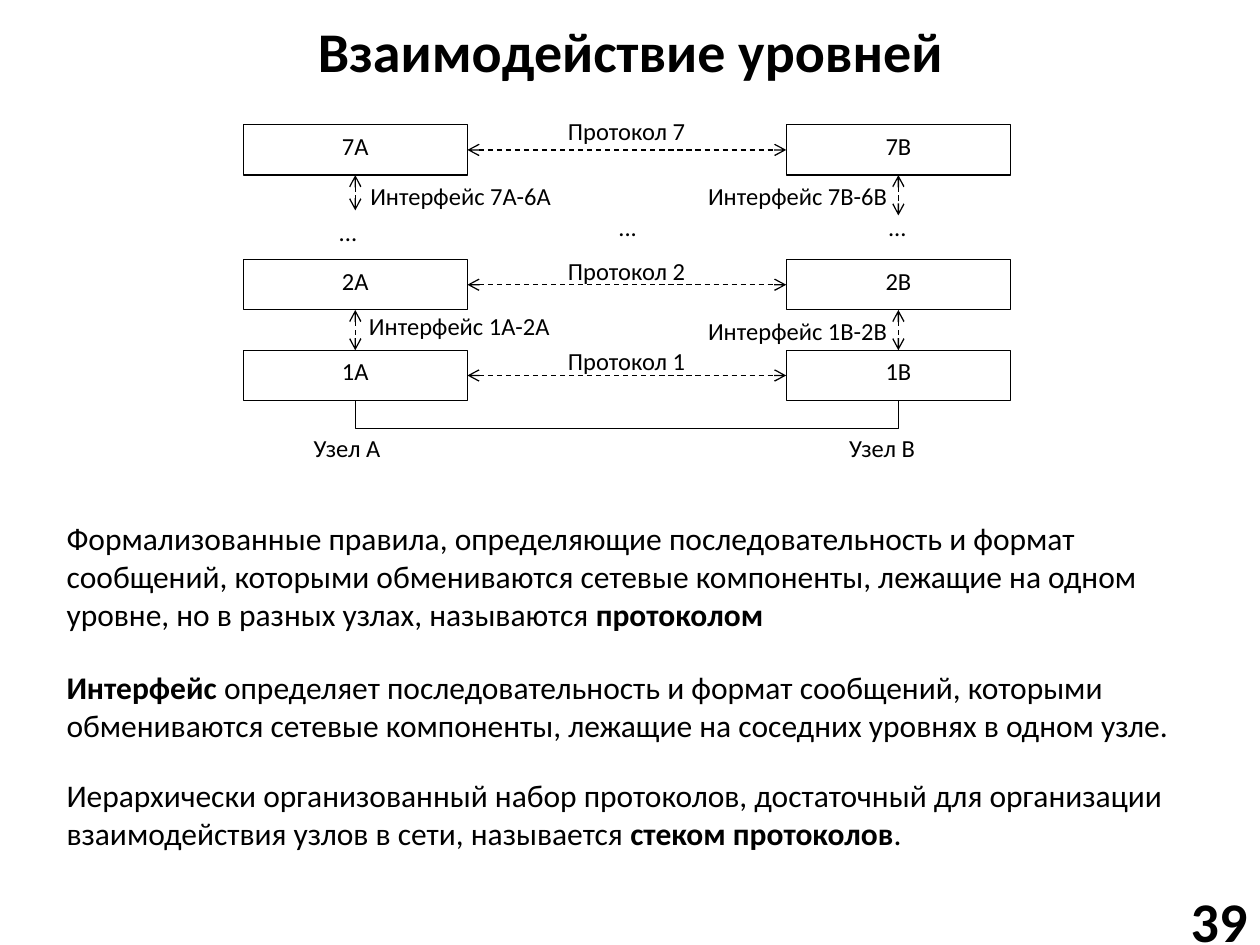
from lxml import etree
from pptx import Presentation
from pptx.dml.color import RGBColor
from pptx.enum.dml import MSO_LINE
from pptx.enum.shapes import MSO_CONNECTOR, MSO_SHAPE
from pptx.enum.text import MSO_ANCHOR, PP_ALIGN
from pptx.oxml.ns import qn
from pptx.util import Inches, Pt

LEFT, CENTER, RIGHT = PP_ALIGN.LEFT, PP_ALIGN.CENTER, PP_ALIGN.RIGHT
TOP, MIDDLE = MSO_ANCHOR.TOP, MSO_ANCHOR.MIDDLE
RECTANGLE = MSO_SHAPE.RECTANGLE
STRAIGHT = MSO_CONNECTOR.STRAIGHT
DASH = MSO_LINE.DASH

FONT = "Calibri"
BLACK, WHITE = "000000", "FFFFFF"
TITLE_ONLY = 5

BOX_WIDTH, BOX_HEIGHT = 1.78, 0.4
NODE_LEFTS = {"A": 1.93, "B": 6.24}
LEVEL_TOPS = {7: 0.99, 2: 2.06, 1: 2.78}
NODE_CENTERS = {node: left + BOX_WIDTH / 2 for node, left in NODE_LEFTS.items()}

# Text, left, top, width, alignment
LABELS = [
    ("Протокол 7", 4.41, 0.87, 1.23, LEFT),
    ("Протокол 2", 4.41, 1.98, 1.23, LEFT),
    ("Протокол 1", 4.41, 2.7, 1.23, LEFT),
    ("Интерфейс 7A-6A", 2.84, 1.39, 1.82, LEFT),
    ("Интерфейс 7B-6B", 5.32, 1.39, 1.82, RIGHT),
    ("Интерфейс 1A-2A", 2.83, 2.42, 1.82, LEFT),
    ("Интерфейс 1B-2B", 5.32, 2.46, 1.82, RIGHT),
    ("...", 2.59, 1.67, 0.4, LEFT),
    ("...", 4.81, 1.63, 0.4, LEFT),
    ("...", 6.95, 1.63, 0.4, LEFT),
    ("Узел A", 2.39, 3.39, 0.91, LEFT),
    ("Узел B", 6.64, 3.39, 0.91, LEFT),
]

# Top, height, runs as (text, bold)
DEFINITIONS = [
    (4.07, 1.01, [
        ("Формализованные правила, определяющие последовательность и формат "
         "сообщений, которыми обмениваются сетевые компоненты, лежащие на одном "
         "уровне, но в разных узлах, называются ", False),
        ("протоколом", True),
    ]),
    (5.25, 0.71, [
        ("Интерфейс", True),
        (" определяет последовательность и формат сообщений, которыми "
         "обмениваются сетевые компоненты, лежащие на соседних уровнях "
         "в одном узле.", False),
    ]),
    (6.11, 0.71, [
        ("Иерархически организованный набор протоколов, достаточный для "
         "организации взаимодействия узлов в сети, называется ", False),
        ("стеком протоколов", True),
        (".", False),
    ]),
]


def color(value):
    return RGBColor.from_string(value)


def write_text(shape, runs, size, alignment=LEFT, anchor=TOP):
    """Fill the shape with one paragraph of (text, bold) runs."""
    frame = shape.text_frame
    frame.word_wrap = True
    frame.vertical_anchor = anchor
    paragraph = frame.paragraphs[0]
    paragraph.alignment = alignment
    paragraph.font.name = FONT
    paragraph.font.size = Pt(size)
    paragraph.font.color.rgb = color(BLACK)
    for text, bold in runs:
        run = paragraph.add_run()
        run.text = text
        run.font.bold = bold


def add_title(slide, text):
    title = slide.shapes.title
    title.left, title.top = Inches(0.28), Inches(0.05)
    title.width, title.height = Inches(9.45), Inches(0.69)
    write_text(title, [(text, True)], 32, CENTER, MIDDLE)


def add_text(slide, left, top, width, height, runs, size, alignment=LEFT, anchor=TOP):
    box = slide.shapes.add_textbox(
        Inches(left), Inches(top), Inches(width), Inches(height))
    write_text(box, runs, size, alignment, anchor)


def add_level_box(slide, left, top, text):
    box = slide.shapes.add_shape(
        RECTANGLE, Inches(left), Inches(top), Inches(BOX_WIDTH), Inches(BOX_HEIGHT))
    box.shadow.inherit = False
    box.fill.solid()
    box.fill.fore_color.rgb = color(WHITE)
    style_line(box.line)
    write_text(box, [(text, False)], 14, CENTER)


def style_line(line):
    line.color.rgb = color(BLACK)
    line.width = Pt(0.75)


def add_double_arrow(slide, start_x, start_y, end_x, end_y):
    arrow = slide.shapes.add_connector(
        STRAIGHT, Inches(start_x), Inches(start_y), Inches(end_x), Inches(end_y))
    style_line(arrow.line)
    arrow.line.dash_style = DASH
    properties = arrow.line._get_or_add_ln()
    for end in ("a:headEnd", "a:tailEnd"):
        etree.SubElement(properties, qn(end), type="arrow")
    etree.SubElement(arrow._element.spPr, qn("a:effectLst"))


def add_cable(slide):
    """Draw the physical link joining the lowest levels of the two nodes."""
    top = Inches(LEVEL_TOPS[1] + BOX_HEIGHT)
    bottom = Inches(3.4)
    left, right = (Inches(center) for center in NODE_CENTERS.values())
    builder = slide.shapes.build_freeform(left, top)
    builder.add_line_segments(
        [(left, bottom), (right, bottom), (right, top)], close=False)
    cable = builder.convert_to_shape()
    cable.shadow.inherit = False
    cable.fill.background()
    style_line(cable.line)


def add_diagram(slide):
    for level, top in LEVEL_TOPS.items():
        for node, left in NODE_LEFTS.items():
            add_level_box(slide, left, top, f"{level}{node}")
        middle = top + BOX_HEIGHT / 2
        add_double_arrow(
            slide, NODE_LEFTS["A"] + BOX_WIDTH, middle, NODE_LEFTS["B"], middle)

    upper_arrow_ends = {"A": 1.67, "B": 1.71}
    for node, center in NODE_CENTERS.items():
        add_double_arrow(
            slide, center, LEVEL_TOPS[7] + BOX_HEIGHT, center, upper_arrow_ends[node])
        add_double_arrow(
            slide, center, LEVEL_TOPS[2] + BOX_HEIGHT, center, LEVEL_TOPS[1])
    add_cable(slide)

    for text, left, top, width, alignment in LABELS:
        add_text(slide, left, top, width, 0.4, [(text, False)], 14, alignment)


def main():
    presentation = Presentation()
    presentation.slide_width = Inches(10)
    presentation.slide_height = Inches(7.5)
    slide = presentation.slides.add_slide(presentation.slide_layouts[TITLE_ONLY])

    add_title(slide, "Взаимодействие уровней")
    add_diagram(slide)
    for top, height, runs in DEFINITIONS:
        add_text(slide, 0.43, top, 9.13, height, runs, 18)
    add_text(slide, 8.86, 7.1, 1.14, 0.4, [("39", True)], 32, RIGHT, MIDDLE)

    presentation.save("out.pptx")


if __name__ == "__main__":
    main()
